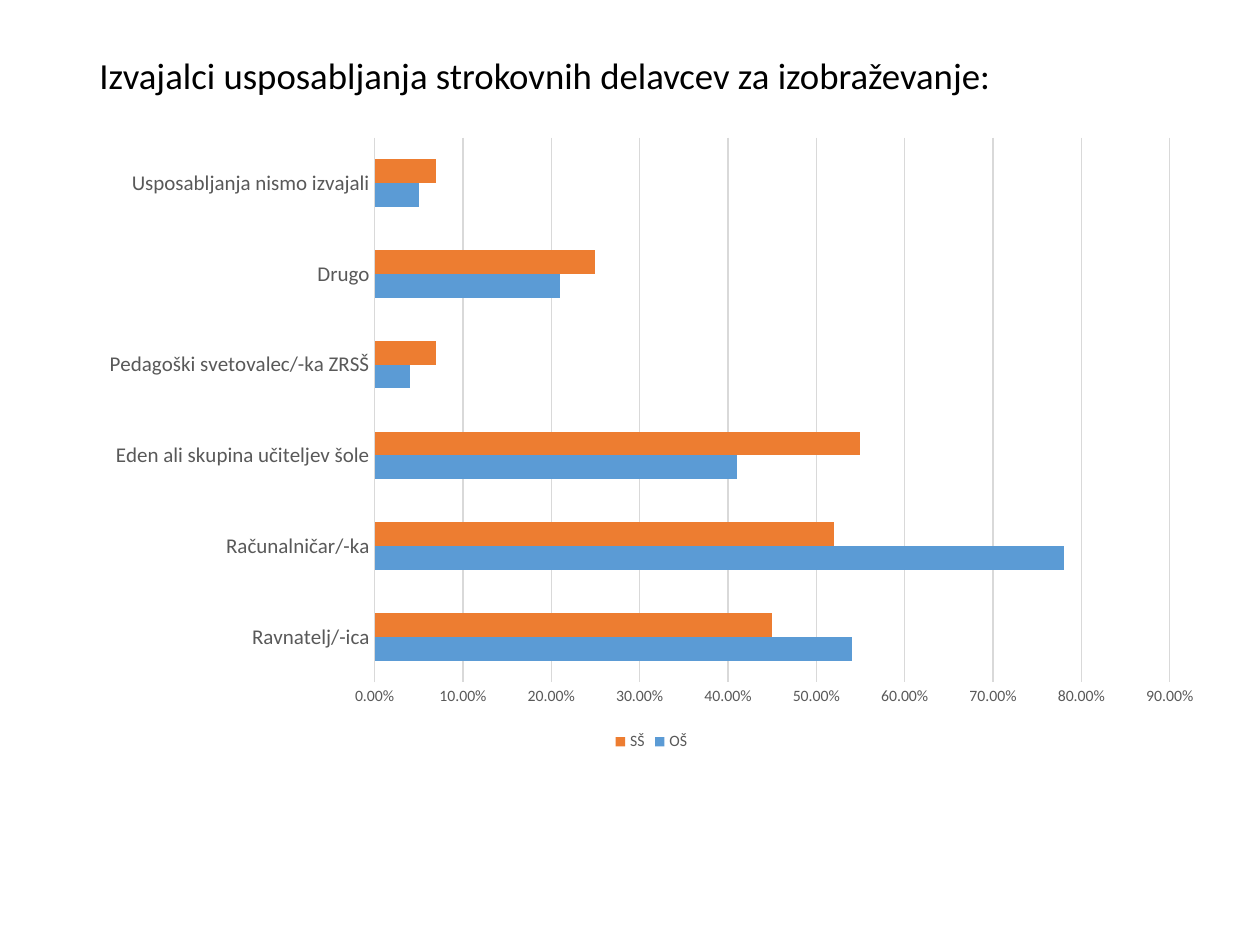
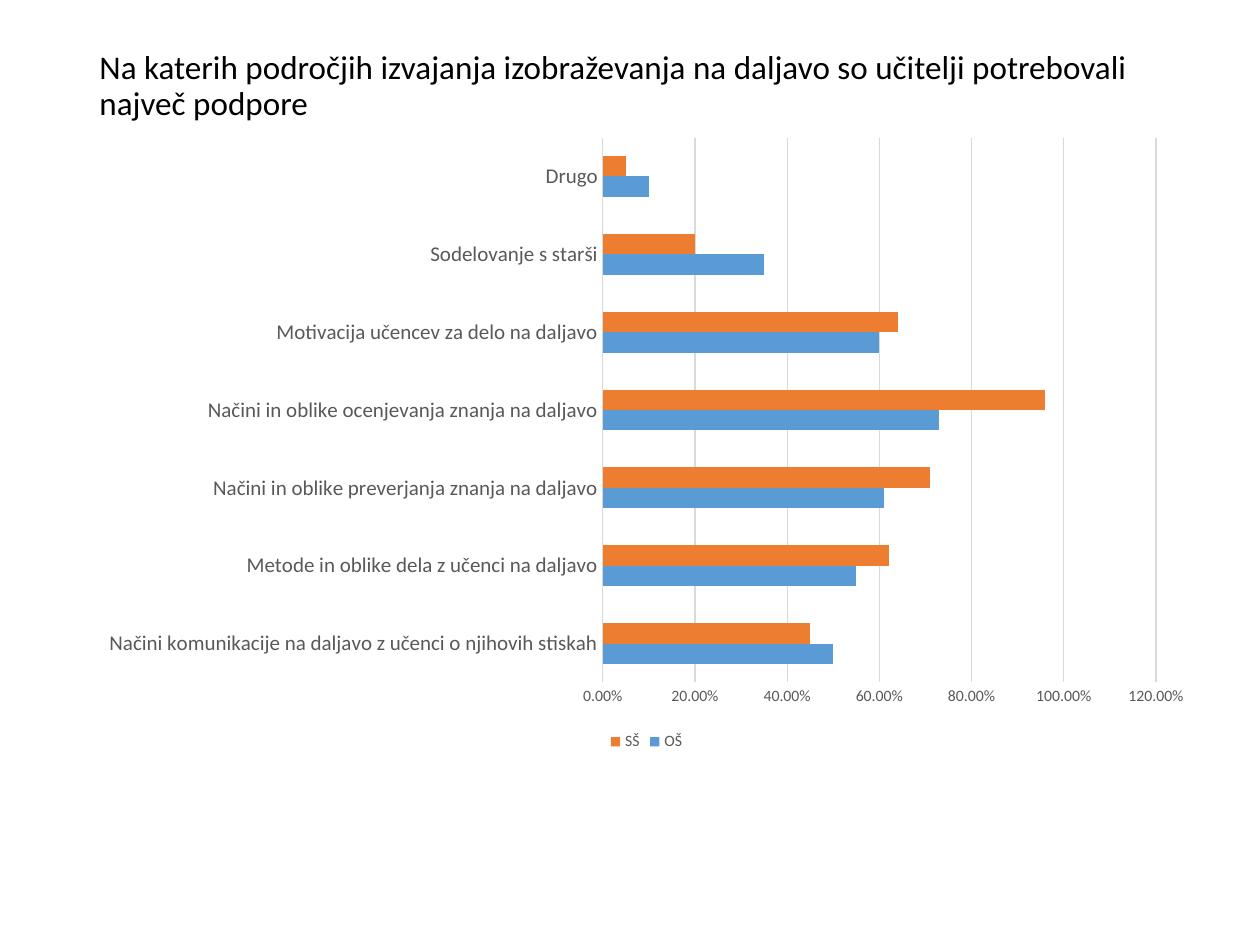
from dataclasses import dataclass

from pptx import Presentation
from pptx.chart.axis import CategoryAxis, ValueAxis
from pptx.chart.data import CategoryChartData
from pptx.dml.color import RGBColor
from pptx.enum.chart import XL_CHART_TYPE, XL_LEGEND_POSITION, XL_TICK_MARK
from pptx.enum.text import MSO_ANCHOR
from pptx.slide import Slide
from pptx.text.text import Font
from pptx.util import Emu, Pt

# Shared scale, font and colours
PX = 914400 / 126
FONT = "Calibri"
BLACK = RGBColor(0x00, 0x00, 0x00)
GRAY = RGBColor(0x59, 0x59, 0x59)
GRID = RGBColor(0xD9, 0xD9, 0xD9)
BLUE = RGBColor(0x5B, 0x9B, 0xD5)
ORANGE = RGBColor(0xED, 0x7D, 0x31)

# Shared geometry
SLIDE_W, SLIDE_H = 1260, 945
LEFT = 87
TITLE_TOP, TITLE_W = 50, 1139
CHART_TOP, CHART_H = 125, 631


@dataclass
class Answer:
    label: str
    primary: float
    secondary: float


@dataclass
class Survey:
    title: str
    title_size: float
    title_h: int
    chart_w: int
    axis_max: float
    axis_step: float
    answers: list[Answer]


SURVEYS = [
    Survey(
        "Izvajalci usposabljanja strokovnih delavcev za izobraževanje:",
        21, 55, 1129, 0.9, 0.1,
        [
            Answer("Ravnatelj/-ica", 0.54, 0.45),
            Answer("Računalničar/-ka", 0.78, 0.52),
            Answer("Eden ali skupina učiteljev šole", 0.41, 0.55),
            Answer("Pedagoški svetovalec/-ka ZRSŠ", 0.04, 0.07),
            Answer("Drugo", 0.21, 0.25),
            Answer("Usposabljanja nismo izvajali", 0.05, 0.07),
        ],
    ),
    Survey(
        "Na katerih področjih izvajanja izobraževanja na daljavo "
        "so učitelji potrebovali največ podpore",
        18.9, 74, 1119, 1.2, 0.2,
        [
            Answer("Načini komunikacije na daljavo z učenci o njihovih stiskah", 0.5, 0.45),
            Answer("Metode in oblike dela z učenci na daljavo", 0.55, 0.62),
            Answer("Načini in oblike preverjanja znanja na daljavo", 0.61, 0.71),
            Answer("Načini in oblike ocenjevanja znanja na daljavo", 0.73, 0.96),
            Answer("Motivacija učencev za delo na daljavo", 0.6, 0.64),
            Answer("Sodelovanje s starši", 0.35, 0.2),
            Answer("Drugo", 0.1, 0.05),
        ],
    ),
]


def px(*lengths: int) -> list[Emu]:
    return [Emu(round(length * PX)) for length in lengths]


def style_font(font: Font, size: float, color: RGBColor) -> None:
    font.name = FONT
    font.size = Pt(size)
    font.bold = False
    font.color.rgb = color


def style_axis(axis: CategoryAxis | ValueAxis, size: float) -> None:
    axis.major_tick_mark = XL_TICK_MARK.NONE
    axis.minor_tick_mark = XL_TICK_MARK.NONE
    style_font(axis.tick_labels.font, size, GRAY)


def add_title(s: Slide, survey: Survey) -> None:
    sp = s.shapes.add_textbox(*px(LEFT, TITLE_TOP, TITLE_W, survey.title_h))
    tf = sp.text_frame
    tf.word_wrap = True
    tf.vertical_anchor = MSO_ANCHOR.MIDDLE
    p = tf.paragraphs[0]
    p.line_spacing = 0.9
    r = p.add_run()
    r.text = survey.title
    style_font(r.font, survey.title_size, BLACK)


def add_bars(s: Slide, survey: Survey) -> None:
    data = CategoryChartData(number_format="0.00%")
    data.categories = [a.label for a in survey.answers]
    data.add_series("OŠ", [a.primary for a in survey.answers])
    data.add_series("SŠ", [a.secondary for a in survey.answers])
    chart = s.shapes.add_chart(
        XL_CHART_TYPE.BAR_CLUSTERED,
        *px(LEFT, CHART_TOP, survey.chart_w, CHART_H), data,
    ).chart
    chart.has_title = False
    style_font(chart.font, 10, BLACK)

    # Bars
    plot = chart.plots[0]
    plot.gap_width = 182
    plot.vary_by_categories = False
    for series, color in zip(plot.series, (BLUE, ORANGE)):
        series.format.fill.solid()
        series.format.fill.fore_color.rgb = color

    # Axes
    cat_axis, val_axis = chart.category_axis, chart.value_axis
    style_axis(cat_axis, 12)
    style_axis(val_axis, 9)
    val_axis.has_major_gridlines = True
    for line in (cat_axis.format.line, val_axis.major_gridlines.format.line):
        line.color.rgb = GRID
        line.width = Pt(0.75)
    val_axis.format.line.fill.background()
    val_axis.minimum_scale = 0
    val_axis.maximum_scale = survey.axis_max
    val_axis.major_unit = survey.axis_step
    val_axis.tick_labels.number_format = "0.00%"
    val_axis.tick_labels.number_format_is_linked = False

    # Legend
    chart.has_legend = True
    chart.legend.position = XL_LEGEND_POSITION.BOTTOM
    chart.legend.include_in_layout = False
    style_font(chart.legend.font, 9, GRAY)


def main() -> None:
    prs = Presentation()
    prs.slide_width, prs.slide_height = px(SLIDE_W, SLIDE_H)
    for survey in SURVEYS:
        s = prs.slides.add_slide(prs.slide_layouts[6])
        add_title(s, survey)
        add_bars(s, survey)
    prs.save("out.pptx")


if __name__ == "__main__":
    main()
